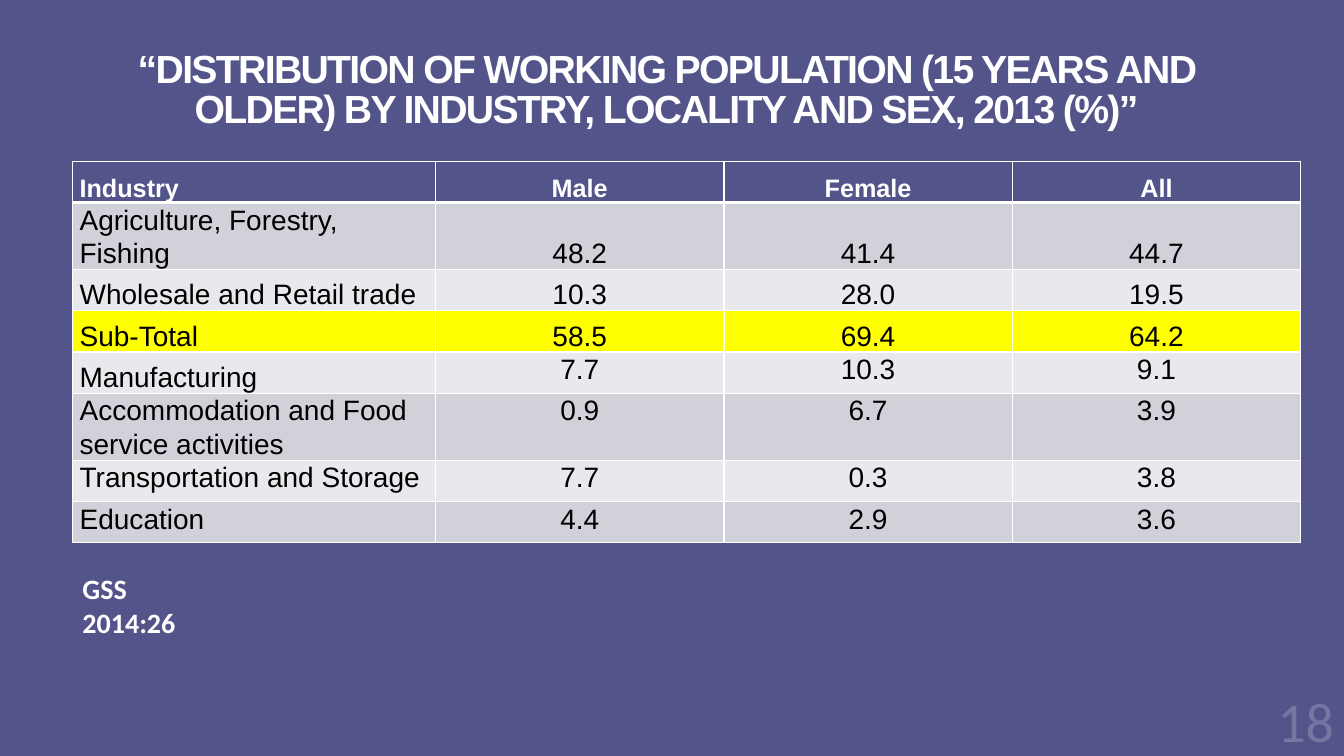
import dataclasses

import pptx
import pptx.dml.color
import pptx.enum.text
import pptx.oxml
import pptx.oxml.ns
import pptx.table
import pptx.text.text
import pptx.util

Inches = pptx.util.Inches
Pt = pptx.util.Pt
ALIGN = pptx.enum.text.PP_ALIGN
ANCHOR = pptx.enum.text.MSO_ANCHOR

COLORS = {
    "background": "53548A",
    "white": "FFFFFF",
    "black": "000000",
    "dark_band": "D1D1DA",
    "light_band": "E9E9ED",
    "highlight": "FFFF00",
    "page_number": "7576A1",
}


@dataclasses.dataclass(frozen=True)
class IndustryRow:
    label: str
    values: tuple[str, ...]
    label_anchor: ANCHOR = ANCHOR.TOP
    value_anchor: ANCHOR = ANCHOR.TOP
    highlighted: bool = False


HEADER = IndustryRow("Industry", ("Male", "Female", "All"), ANCHOR.BOTTOM, ANCHOR.BOTTOM)
INDUSTRIES = [
    IndustryRow("Agriculture, Forestry, Fishing", ("48.2", "41.4", "44.7"),
                ANCHOR.BOTTOM, ANCHOR.BOTTOM),
    IndustryRow("Wholesale and Retail trade", ("10.3", "28.0", "19.5"),
                ANCHOR.BOTTOM, ANCHOR.BOTTOM),
    IndustryRow("Sub-Total", ("58.5", "69.4", "64.2"),
                ANCHOR.BOTTOM, ANCHOR.BOTTOM, highlighted=True),
    IndustryRow("Manufacturing", ("7.7", "10.3", "9.1"), ANCHOR.BOTTOM),
    IndustryRow("Accommodation and Food service activities", ("0.9", "6.7", "3.9")),
    IndustryRow("Transportation and Storage", ("7.7", "0.3", "3.8")),
    IndustryRow("Education", ("4.4", "2.9", "3.6")),
]
COLUMN_WIDTHS = (3.6, 2.86, 2.86, 2.86)
ROW_HEIGHT = 0.41


def rgb(name: str) -> pptx.dml.color.RGBColor:
    return pptx.dml.color.RGBColor.from_string(COLORS[name])


def format_paragraph(p: pptx.text.text._Paragraph, size: float, color: str,
                     name: str = "Arial", bold: bool = False,
                     align: ALIGN = ALIGN.LEFT) -> None:
    p.alignment = align
    p.font.name = name
    p.font.size = Pt(size)
    p.font.bold = bold
    p.font.color.rgb = rgb(color)


def set_borders(cell: pptx.table._Cell, top: float, bottom: float) -> None:
    """Draw white cell borders; widths are in points. Call before filling."""
    tc_pr = cell._tc.get_or_add_tcPr()
    for side, width in (("L", 1), ("R", 1), ("T", top), ("B", bottom)):
        tc_pr.append(pptx.oxml.parse_xml(
            f'<a:ln{side} {pptx.oxml.ns.nsdecls("a")} w="{Pt(width)}">'
            f'<a:solidFill><a:srgbClr val="{COLORS["white"]}"/></a:solidFill>'
            f'</a:ln{side}>'))


def fill_row(table: pptx.table.Table, index: int, row: IndustryRow) -> None:
    is_header = index == 0
    if is_header:
        fill = "background"
    elif row.highlighted:
        fill = "highlight"
    else:
        fill = "dark_band" if index % 2 else "light_band"
    for column, text in enumerate((row.label, *row.values)):
        cell = table.cell(index, column)
        cell.text = text
        cell.margin_left = cell.margin_right = Inches(0.07)
        cell.margin_top = cell.margin_bottom = 0
        cell.vertical_anchor = row.value_anchor if column else row.label_anchor
        set_borders(cell, top=3 if index == 1 else 1, bottom=3 if is_header else 1)
        cell.fill.solid()
        cell.fill.fore_color.rgb = rgb(fill)
        p = cell.text_frame.paragraphs[0]
        p.line_spacing = 1.07
        format_paragraph(p, 18 if is_header else 20, "white" if is_header else "black",
                         bold=is_header, align=ALIGN.CENTER if column else ALIGN.LEFT)


def add_title(slide: pptx.slide.Slide, text: str) -> None:
    sp = slide.shapes.title
    sp.left, sp.top, sp.width, sp.height = map(Inches, (0.72, 0, 11.78, 1.81))
    tf = sp.text_frame
    tf.text = text
    tf.word_wrap = True
    tf.auto_size = pptx.enum.text.MSO_AUTO_SIZE.NONE
    tf.vertical_anchor = ANCHOR.MIDDLE
    p = tf.paragraphs[0]
    p.line_spacing = 0.85
    format_paragraph(p, 28, "white", bold=True, align=ALIGN.CENTER)
    p.runs[0].font._element.set("spc", "-120")


def add_industry_table(slide: pptx.slide.Slide) -> None:
    rows = [HEADER, *INDUSTRIES]
    table = slide.shapes.add_table(
        len(rows), len(COLUMN_WIDTHS), Inches(0.72), Inches(1.6),
        Inches(sum(COLUMN_WIDTHS)), Inches(ROW_HEIGHT * len(rows))).table
    table.horz_banding = False
    for column, width in zip(table.columns, COLUMN_WIDTHS):
        column.width = Inches(width)
    for index, row in enumerate(rows):
        table.rows[index].height = Inches(ROW_HEIGHT)
        fill_row(table, index, row)


def add_text(slide: pptx.slide.Slide, text: str, box: tuple[float, ...], size: float,
             color: str, bold: bool, align: ALIGN) -> None:
    tf = slide.shapes.add_textbox(*map(Inches, box)).text_frame
    tf.text = text
    tf.word_wrap = True
    format_paragraph(tf.paragraphs[0], size, color, "Calibri", bold, align)


def main() -> None:
    prs = pptx.Presentation()
    prs.slide_width, prs.slide_height = Inches(13.33), Inches(7.5)
    slide = prs.slides.add_slide(prs.slide_layouts[5])
    slide.background.fill.solid()
    slide.background.fill.fore_color.rgb = rgb("background")

    add_title(slide, "“DISTRIBUTION OF WORKING POPULATION (15 YEARS AND OLDER) "
                     "BY INDUSTRY, LOCALITY AND SEX, 2013 (%)”")
    add_industry_table(slide)
    add_text(slide, "GSS 2014:26", (0.72, 5.62, 1.6, 0.77), 20, "white", True, ALIGN.LEFT)
    add_text(slide, "18", (12.13, 6.76, 1.2, 0.74), 40, "page_number", False, ALIGN.RIGHT)
    prs.save("out.pptx")


if __name__ == "__main__":
    main()
